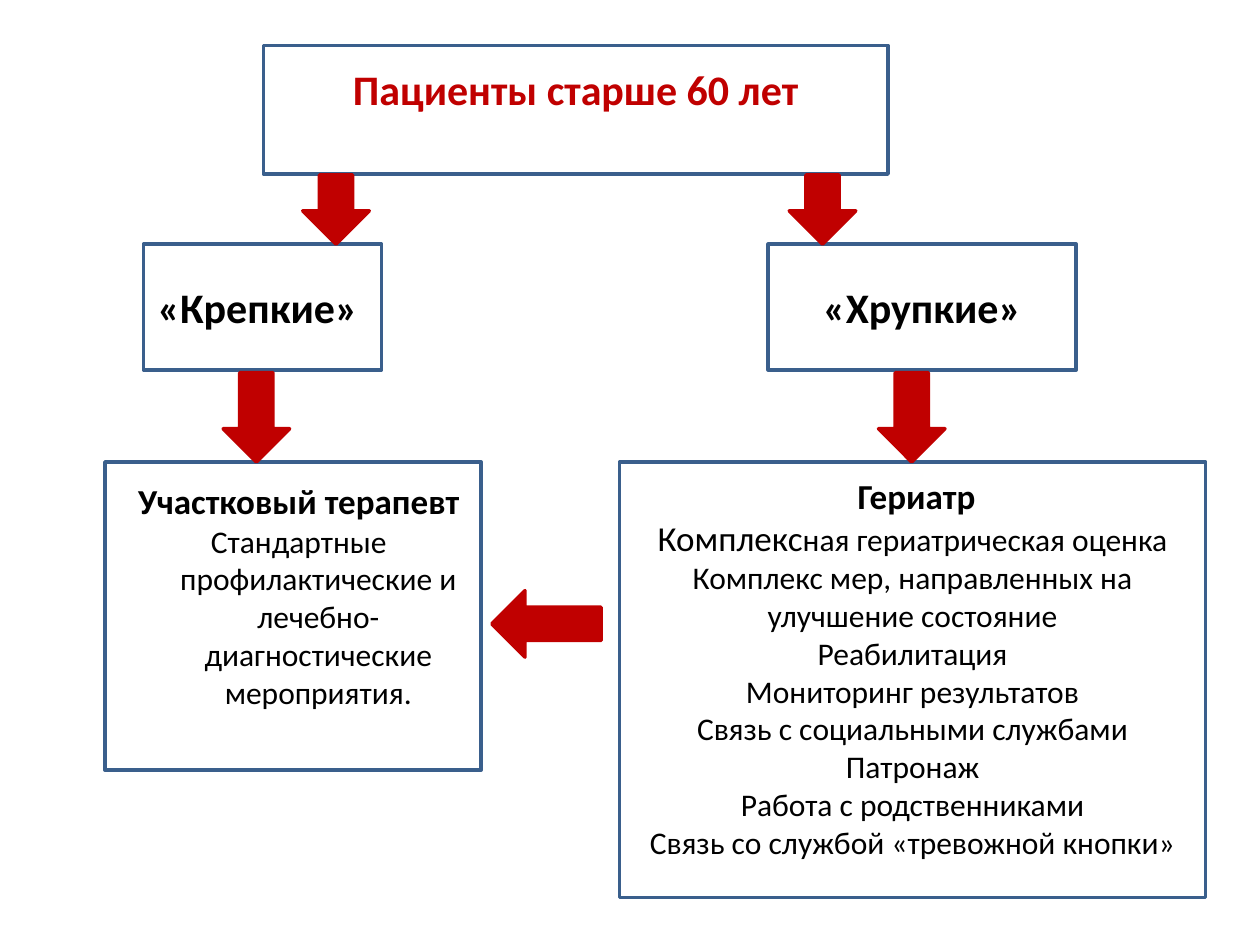
from dataclasses import dataclass

from pptx import Presentation
from pptx.dml.color import RGBColor
from pptx.enum import shapes, text
from pptx.util import Pt


@dataclass(frozen=True)
class Theme:
    font: str = "Calibri"
    red: str = "C00000"
    blue: str = "3A5F8C"
    black: str = "000000"
    big: int = 24
    mid: int = 20
    small: int = 18
    rule: int = 2


THEME = Theme()
KIND = shapes.MSO_SHAPE
TOP = text.MSO_ANCHOR.TOP
MIDDLE = text.MSO_ANCHOR.MIDDLE


def apply(item, form):
    for name, value in form.items():
        setattr(item, name, value)


def place(shape, box):
    names = ("left", "top", "width", "height")
    apply(shape, dict(zip(names, map(Pt, box))))


def trim(shape, line, fill=None):
    shape.line.color.rgb = RGBColor.from_string(line)
    shape.line.width = Pt(THEME.rule)
    if fill:
        shape.fill.solid()
        shape.fill.fore_color.rgb = RGBColor.from_string(fill)
    else:
        shape.fill.background()


def draw(slide, kind, box, line, fill=None):
    shape = slide.shapes.add_shape(kind, *map(Pt, box))
    shape.shadow.inherit = False
    trim(shape, line, fill)
    return shape


def write(shape, rows, anchor=MIDDLE, top=3.6, right=7.2, color=THEME.black):
    frame = shape.text_frame
    apply(frame, {
        "word_wrap": True, "auto_size": text.MSO_AUTO_SIZE.NONE,
        "vertical_anchor": anchor, "margin_left": Pt(7.2),
        "margin_right": Pt(right), "margin_top": Pt(top),
        "margin_bottom": Pt(3.6),
    })
    for num, (runs, left, first) in enumerate(rows):
        para = frame.add_paragraph() if num else frame.paragraphs[0]
        para.alignment = text.PP_ALIGN.CENTER
        props = para._p.get_or_add_pPr()
        props.set("marL", str(Pt(left)))
        props.set("indent", str(Pt(first)))
        for words, size, bold in runs:
            run = para.add_run()
            run.text = words
            apply(run.font, {"name": THEME.font, "size": Pt(size), "bold": bold})
            run.font.color.rgb = RGBColor.from_string(color)


def row(words, size=THEME.small, bold=False, left=0, first=0):
    return [(words, size, bold)], left, first


def head(slide, box, words):
    title = slide.shapes.title
    place(title, box)
    trim(title, THEME.blue)
    write(title, [row(words, THEME.big, True)], TOP, 10, color=THEME.red)


def label(slide, box, words, right=7.2):
    shape = draw(slide, KIND.RECTANGLE, box, THEME.blue)
    write(shape, [row(words, THEME.big, True)], right=right)


def panel(slide, box, rows, top):
    shape = draw(slide, KIND.RECTANGLE, box, THEME.blue)
    write(shape, rows, TOP, top)


def arrow(slide, box, kind=KIND.DOWN_ARROW):
    draw(slide, kind, box, THEME.red, THEME.red)


def main():
    deck = Presentation()
    apply(deck, {"slide_width": Pt(720), "slide_height": Pt(540)})
    slide = deck.slides.add_slide(deck.slide_layouts[5])

    head(slide, (150.5, 26, 357, 73.5), "Пациенты старше 60 лет")
    label(slide, (82, 139.5, 136, 72), "«Крепкие»", 12.6)
    label(slide, (439, 139.5, 176, 72), "«Хрупкие»")

    hang = {"left": 28.8, "first": -22.3}
    panel(slide, (60, 264, 215, 176), [
        row("Участковый терапевт", THEME.mid, True, **hang),
        row("Стандартные профилактические и лечебно-диагностические "
            "мероприятия.", **hang),
    ], 10)

    mixed = [("Комплекс", THEME.mid, False),
             ("ная гериатрическая оценка", THEME.small, False)]
    tasks = (
        "Комплекс мер, направленных на улучшение состояние",
        "Реабилитация",
        "Мониторинг результатов",
        "Связь с социальными службами",
        "Патронаж",
        "Работа с родственниками",
        "Связь со службой «тревожной кнопки»",
    )
    panel(slide, (354, 264, 335, 249), [
        row("Гериатр", THEME.mid, True, left=4.5), (mixed, 0, 0),
        *map(row, tasks),
    ], 7)

    for top, tall, lefts in ((100, 39.5, (173, 451)), (213, 51, (127.5, 502))):
        for left in lefts:
            arrow(slide, (left, top, 38, tall))
    arrow(slide, (281, 337.5, 62.5, 38), KIND.LEFT_ARROW)

    deck.save("out.pptx")


if __name__ == "__main__":
    main()
